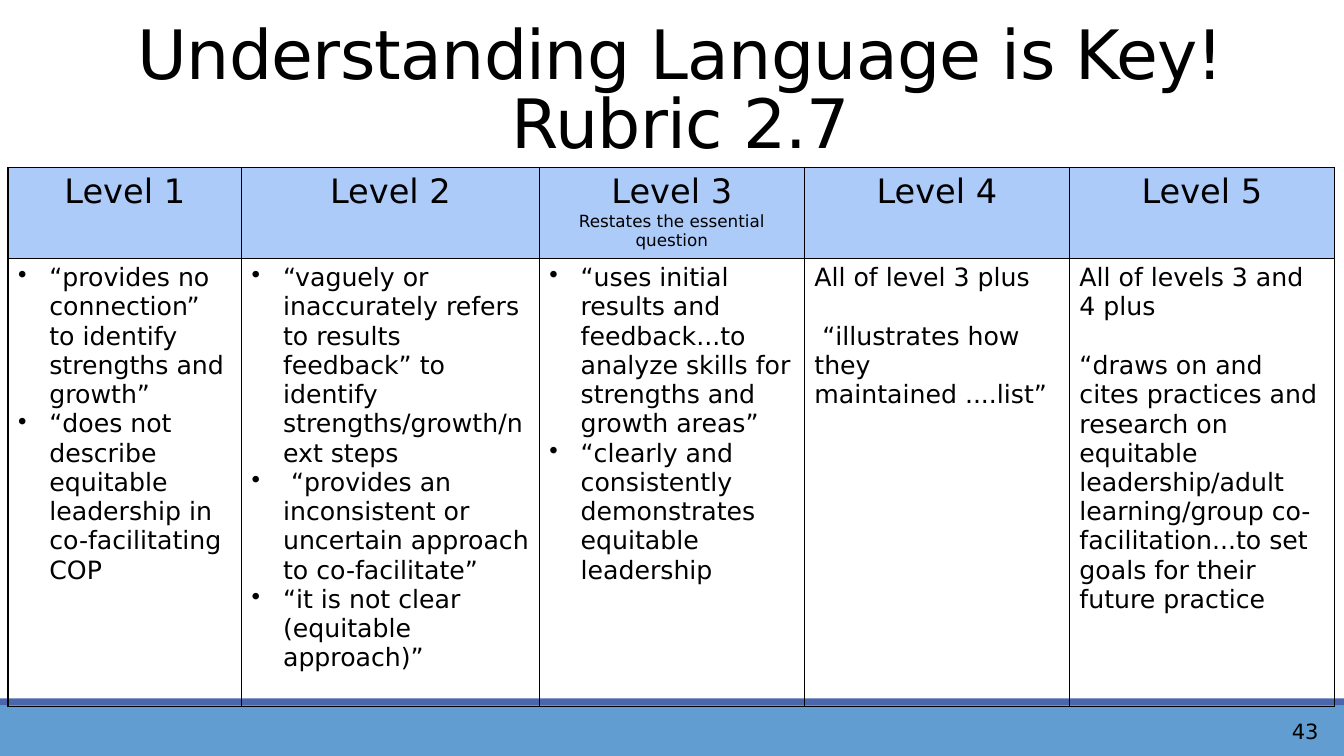
from dataclasses import dataclass
from itertools import product

from lxml.etree import SubElement
from pptx import Presentation
from pptx.dml.color import RGBColor
from pptx.enum.shapes import MSO_SHAPE
from pptx.enum.text import MSO_ANCHOR, PP_ALIGN
from pptx.oxml.ns import qn
from pptx.slide import Slide
from pptx.table import _Cell
from pptx.text.text import TextFrame
from pptx.util import Cm, Pt


@dataclass(frozen=True)
class Theme:
    font: str = "DejaVu Sans"
    text: str = "000000"
    header: str = "ACCBF9"
    footer: str = "629DD1"
    stripe: str = "4A66AC"
    title_size: float = 48.6
    level_size: float = 24
    body_size: float = 18
    number_size: float = 15
    note_size: float = 12


@dataclass(frozen=True)
class Box:
    """Position and size in centimetres."""
    left: float
    top: float
    width: float
    height: float

    def lengths(self) -> tuple[Cm, Cm, Cm, Cm]:
        return Cm(self.left), Cm(self.top), Cm(self.width), Cm(self.height)


@dataclass(frozen=True)
class Level:
    name: str
    width: float
    criteria: tuple[str, ...]
    bulleted: bool = True
    note: str = ""


THEME = Theme()
SLIDE_WIDTH, SLIDE_HEIGHT = 33.87, 19.05
TITLE = Box(0.86, 0.79, 32.59, 3.43)
TABLE = Box(0.2, 4.22, 33.43, 13.55)
HEADER_HEIGHT = 2.25
FOOTER = Box(0, 17.78, SLIDE_WIDTH, 1.27)
STRIPE = Box(0, 17.6, SLIDE_WIDTH, 0.18)
PAGE_NUMBER = Box(31.65, 17.86, 1.83, 1.12)
BULLET_INDENT = Cm(0.79)
PARAGRAPH_GAP = 21

LEVELS = (
    Level("Level 1", 5.89, (
        "“provides no connection” to identify strengths and growth”",
        "“does not describe equitable leadership in co-facilitating COP",
    )),
    Level("Level 2", 7.5, (
        "“vaguely or inaccurately refers to results feedback” to identify "
        "strengths/growth/next steps",
        " “provides an inconsistent or uncertain approach to co-facilitate”",
        "“it is not clear (equitable approach)”",
    )),
    Level("Level 3", 6.68, (
        "“uses initial results and feedback...to analyze skills for "
        "strengths and growth areas”",
        "“clearly and consistently demonstrates equitable leadership",
    ), note="Restates the essential question"),
    Level("Level 4", 6.68, (
        "All of level 3 plus",
        " “illustrates how they maintained ....list”",
    ), bulleted=False),
    Level("Level 5", 6.68, (
        "All of levels 3 and 4 plus",
        "“draws on and cites practices and research on equitable "
        "leadership/adult learning/group co-facilitation...to set goals "
        "for their future practice",
    ), bulleted=False),
)


def write(frame: TextFrame, text: str, *, size: float,
          align: PP_ALIGN = PP_ALIGN.LEFT, line_spacing: float = 1.0,
          space_before: float = 0, tracking: float = 0,
          bullet: bool = False) -> None:
    """Fill the frame's empty first paragraph, or append a new one."""
    first = frame.paragraphs[0]
    paragraph = frame.add_paragraph() if first.runs else first
    paragraph.text = text
    paragraph.alignment = align
    paragraph.line_spacing = line_spacing
    paragraph.space_before = Pt(space_before)
    for run in paragraph.runs:
        run.font.name = THEME.font
        run.font.size = Pt(size)
        run.font.color.rgb = RGBColor.from_string(THEME.text)
        if tracking:
            run.font._element.set("spc", str(round(tracking * 100)))
    if bullet:
        properties = paragraph._p.get_or_add_pPr()
        properties.set("marL", str(BULLET_INDENT))
        properties.set("indent", str(-BULLET_INDENT))
        SubElement(properties, qn("a:buChar"), char="•")


def add_band(slide: Slide, box: Box, color: str) -> None:
    shape = slide.shapes.add_shape(MSO_SHAPE.RECTANGLE, *box.lengths())
    shape.shadow.inherit = False
    shape.fill.solid()
    shape.fill.fore_color.rgb = RGBColor.from_string(color)
    shape.line.fill.background()


def add_text_frame(slide: Slide, box: Box, anchor: MSO_ANCHOR) -> TextFrame:
    frame = slide.shapes.add_textbox(*box.lengths()).text_frame
    frame.word_wrap = True
    frame.vertical_anchor = anchor
    return frame


def add_borders(cell: _Cell) -> None:
    properties = cell._tc.get_or_add_tcPr()
    for side in ("lnL", "lnR", "lnT", "lnB"):
        line = SubElement(properties, qn(f"a:{side}"), w=str(Pt(1)))
        fill = SubElement(line, qn("a:solidFill"))
        SubElement(fill, qn("a:srgbClr"), val=THEME.text)


def add_rubric(slide: Slide) -> None:
    table = slide.shapes.add_table(2, len(LEVELS), *TABLE.lengths()).table
    table.first_row = table.horz_banding = False
    table.rows[0].height = Cm(HEADER_HEIGHT)
    table.rows[1].height = Cm(TABLE.height - HEADER_HEIGHT)
    for row, column in product(range(2), range(len(LEVELS))):
        add_borders(table.cell(row, column))

    for column, level in enumerate(LEVELS):
        table.columns[column].width = Cm(level.width)
        header, body = table.cell(0, column), table.cell(1, column)
        header.fill.solid()
        header.fill.fore_color.rgb = RGBColor.from_string(THEME.header)
        body.fill.background()
        write(header.text_frame, level.name, size=THEME.level_size,
              align=PP_ALIGN.CENTER)
        if level.note:
            write(header.text_frame, level.note, size=THEME.note_size,
                  align=PP_ALIGN.CENTER)
        for index, criterion in enumerate(level.criteria):
            gap = PARAGRAPH_GAP if index and not level.bulleted else 0
            write(body.text_frame, criterion, size=THEME.body_size,
                  space_before=gap, bullet=level.bulleted)


def main() -> None:
    presentation = Presentation()
    presentation.slide_width = Cm(SLIDE_WIDTH)
    presentation.slide_height = Cm(SLIDE_HEIGHT)
    slide = presentation.slides.add_slide(presentation.slide_layouts[6])

    add_band(slide, FOOTER, THEME.footer)
    add_band(slide, STRIPE, THEME.stripe)
    write(add_text_frame(slide, TITLE, MSO_ANCHOR.BOTTOM),
          "Understanding Language is Key!\vRubric 2.7",
          size=THEME.title_size, align=PP_ALIGN.CENTER,
          line_spacing=0.85, tracking=-0.5)
    add_rubric(slide)
    write(add_text_frame(slide, PAGE_NUMBER, MSO_ANCHOR.MIDDLE), "43",
          size=THEME.number_size, align=PP_ALIGN.RIGHT)
    presentation.save("out.pptx")


if __name__ == "__main__":
    main()
